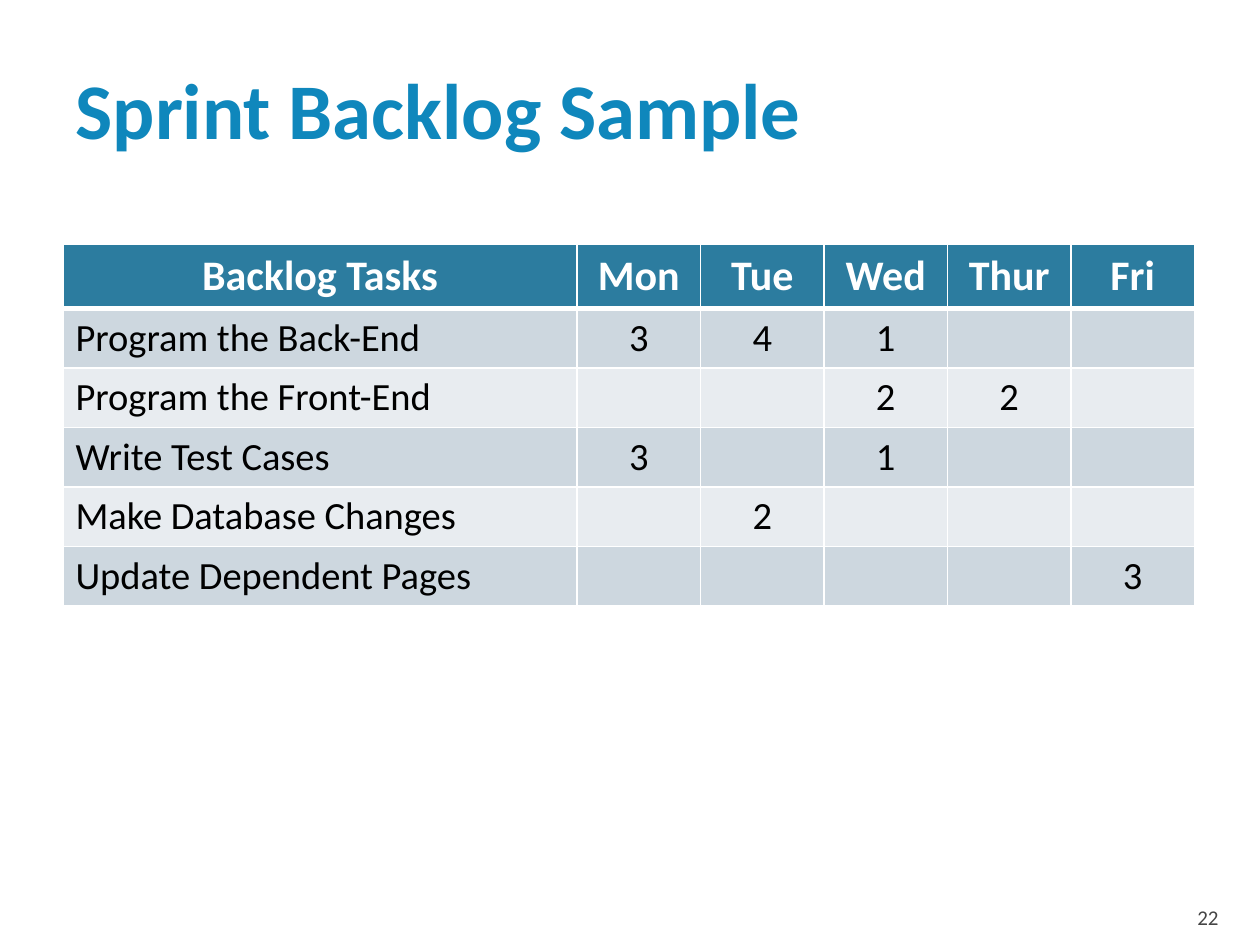
"""Build the sprint backlog sample slide."""
from lxml import etree
from pptx import Presentation
from pptx import util as u
from pptx.dml.color import RGBColor
from pptx.enum import text
from pptx.oxml.ns import qn

TITLE = "Sprint Backlog Sample"
PAGE_NUMBER = "22"
HEADINGS = ["Backlog Tasks", "Mon", "Tue", "Wed", "Thur", "Fri"]
TASKS = [
    ("Program the Back-End", {"Mon": 3, "Tue": 4, "Wed": 1}),
    ("Program the Front-End", {"Wed": 2, "Thur": 2}),
    ("Write Test Cases", {"Mon": 3, "Wed": 1}),
    ("Make Database Changes", {"Tue": 2}),
    ("Update Dependent Pages", {"Fri": 3}),
]
THEME = {
    "font": "Calibri",
    "title": (45, "0F87BC", True),
    "number": (12, "454545", False),
    "heading": (24, "FFFFFF", True),
    "body": (22, "000000", False),
    "header_fill": "2C7C9F",
    "bands": ("CDD7DF", "E8ECF0"),
    "border": "FFFFFF",
}
TASK_WIDTH, DAY_WIDTH, ROW_HEIGHT = 4.08, 0.98, 0.41
TABLE_BOX = (0.5, 1.94, 9, 2.83)


def write(frame, words, style, align):
    para = frame.paragraphs[0]
    para.text = words
    para.alignment = align
    size, color, bold = THEME[style]
    para.font.name = THEME["font"]
    para.font.size = u.Pt(size)
    para.font.bold = bold
    para.font.color.rgb = RGBColor.from_string(color)


def set_frame(frame, anchor, insets):
    frame.word_wrap = True
    frame.auto_size = text.MSO_AUTO_SIZE.NONE
    frame.vertical_anchor = anchor
    sides = ("margin_left", "margin_top", "margin_right", "margin_bottom")
    for side, inset in zip(sides, insets):
        setattr(frame, side, u.Inches(inset))


def add_borders(cell):
    properties = cell._tc.get_or_add_tcPr()
    for side, points in (("L", 1), ("R", 1), ("T", 1), ("B", 3)):
        line = etree.SubElement(properties, qn(f"a:ln{side}"), w=str(u.Pt(points)))
        fill = etree.SubElement(line, qn("a:solidFill"))
        etree.SubElement(fill, qn("a:srgbClr"), val=THEME["border"])


def add_title(page):
    title = page.shapes.title
    title.left, title.top, title.width, title.height = map(u.Inches, (0.5, 0.17, 9, 1.37))
    set_frame(title.text_frame, text.MSO_ANCHOR.MIDDLE, (0.1, 0.05, 0.05, 0.05))
    write(title.text_frame, TITLE, "title", text.PP_ALIGN.LEFT)


def add_page_number(page):
    box = page.shapes.add_textbox(*map(u.Inches, (8.97, 7.08, 0.8, 0.3)))
    set_frame(box.text_frame, text.MSO_ANCHOR.BOTTOM, (0.1, 0.05, 0.1, 0))
    write(box.text_frame, PAGE_NUMBER, "number", text.PP_ALIGN.RIGHT)


def add_backlog(page):
    rows = [HEADINGS]
    for task, hours in TASKS:
        rows.append([task] + [str(hours.get(day, "")) for day in HEADINGS[1:]])
    holder = page.shapes.add_table(len(rows), len(HEADINGS), *map(u.Inches, TABLE_BOX))
    table = holder.table
    for index, column in enumerate(table.columns):
        column.width = u.Inches(DAY_WIDTH if index else TASK_WIDTH)
    for row_index, row in enumerate(rows):
        table.rows[row_index].height = u.Inches(ROW_HEIGHT)
        is_header = row_index == 0
        color = THEME["header_fill"] if is_header else THEME["bands"][(row_index - 1) % 2]
        for column_index, words in enumerate(row):
            cell = table.cell(row_index, column_index)
            if is_header:
                add_borders(cell)
            cell.fill.solid()
            cell.fill.fore_color.rgb = RGBColor.from_string(color)
            if words:
                centred = is_header or column_index > 0
                align = text.PP_ALIGN.CENTER if centred else text.PP_ALIGN.LEFT
                write(cell.text_frame, words, "heading" if is_header else "body", align)
    holder.height = u.Inches(TABLE_BOX[3])


def main():
    deck = Presentation()
    deck.slide_width, deck.slide_height = u.Inches(10), u.Inches(7.5)
    page = deck.slides.add_slide(deck.slide_layouts[5])
    add_title(page)
    add_page_number(page)
    add_backlog(page)
    deck.save("out.pptx")


if __name__ == "__main__":
    main()
